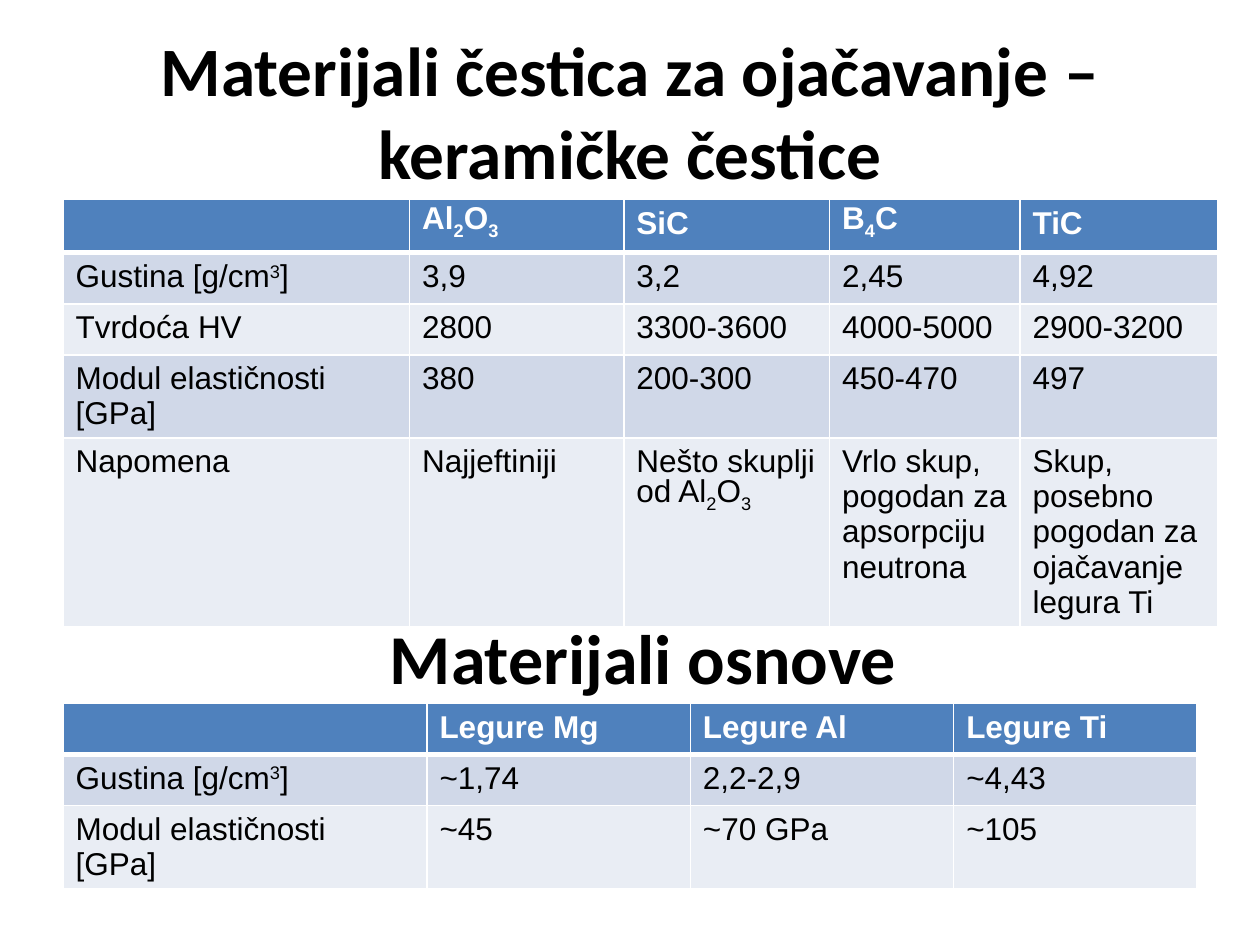
from lxml import etree
from pptx import Presentation
from pptx.dml.color import RGBColor
from pptx.enum.text import MSO_ANCHOR, PP_ALIGN
from pptx.oxml.ns import qn
from pptx.util import Pt

CENTER = PP_ALIGN.CENTER
MIDDLE = MSO_ANCHOR.MIDDLE
COLORS = {"head": "4F81BD", "odd": "D0D8E8", "even": "E9EDF4",
          "white": "FFFFFF", "black": "000000"}
SHIFTS = {"_": "-25000", "^": "30000"}
ROW = 29.2
PITCH = 20.1  # fixed line height keeps the rows tight

# Within a text, "|" parts the runs; a run led by "_" is lowered, by "^" raised.
DENSITY = "Gustina [g/cm|^3|]"
MODULUS = "Modul elastičnosti [GPa]"
PARTICLES = [
    ["", "Al|_2|O|_3", "SiC", "B|_4|C", "TiC"],
    [DENSITY, "3,9", "3,2", "2,45", "4,92"],
    ["Tvrdoća HV", "2800", "3300-3600", "4000-5000", "2900-3200"],
    [MODULUS, "380", "200-300", "450-470", "497"],
    ["Napomena", "Najjeftiniji", "Nešto skuplji od Al|_2|O|_3",
     "Vrlo skup, pogodan za apsorpciju neutrona",
     "Skup, posebno pogodan za ojačavanje legura Ti"],
]
ALLOYS = [
    ["", "Legure Mg", "Legure Al", "Legure Ti"],
    [DENSITY, "~1,74", "2,2-2,9", "~4,43"],
    [MODULUS, "~45", "~70 GPa", "~105"],
]


def rgb(name):
    return RGBColor.from_string(COLORS[name])


def write(frame, text, size=18, font="Arial", color="black", bold=False,
          align=None, pitch=None):
    para = frame.paragraphs[0]
    para.alignment = align
    if pitch:
        para.line_spacing = Pt(pitch)
    for part in text.split("|") if text else []:
        shift = SHIFTS.get(part[0])
        run = para.add_run()
        run.text = part[1:] if shift else part
        run.font.size = Pt(size)
        run.font.name = font
        run.font.bold = bold
        run.font.color.rgb = rgb(color)
        if shift:
            run.font._element.set("baseline", shift)


def add_title(slide, text, box, size):
    frame = slide.shapes.add_textbox(*map(Pt, box)).text_frame
    frame.word_wrap = True
    frame.vertical_anchor = MIDDLE
    write(frame, text, size=size, font="Calibri", bold=True, align=CENTER)


def add_edge(cell, side, width):
    props = cell._tc.get_or_add_tcPr()
    line = etree.SubElement(props, qn(f"a:ln{side}"), w=str(Pt(width)))
    fill = etree.SubElement(line, qn("a:solidFill"))
    etree.SubElement(fill, qn("a:srgbClr"), val=COLORS["white"])


def add_grid(slide, data, left, top, widths, first=ROW):
    """Draw a banded table whose header row has the height first."""
    box = (left, top, sum(widths), ROW * len(data))
    table = slide.shapes.add_table(len(data), len(widths), *map(Pt, box)).table
    table.rows[0].height = Pt(first)
    for col, width in zip(table.columns, widths):
        col.width = Pt(width)
    for i, texts in enumerate(data):
        head = i == 0
        shade = "head" if head else "odd" if i % 2 else "even"
        for j, text in enumerate(texts):
            cell = table.cell(i, j)
            for side in "LRTB":
                thick = (i, side) in ((0, "B"), (1, "T"))
                add_edge(cell, side, 3 if thick else 1)
            cell.fill.solid()
            cell.fill.fore_color.rgb = rgb(shade)
            write(cell.text_frame, text, bold=head, pitch=PITCH,
                  color="white" if head else "black")


def main():
    deck = Presentation()
    deck.slide_width, deck.slide_height = Pt(720), Pt(540)
    slide = deck.slides.add_slide(deck.slide_layouts[6])
    add_title(slide, "Materijali čestica za ojačavanje – keramičke čestice",
              (36, 18, 648, 90), 39.6)
    add_grid(slide, PARTICLES, 36, 114, [198, 122.5, 117.5, 108.9, 113.1],
             first=30.4)
    add_title(slide, "Materijali osnove ", (48, 330, 648, 90), 40)
    add_grid(slide, ALLOYS, 36, 402, [208, 150.5, 150.5, 139])
    deck.save("out.pptx")


if __name__ == "__main__":
    main()
